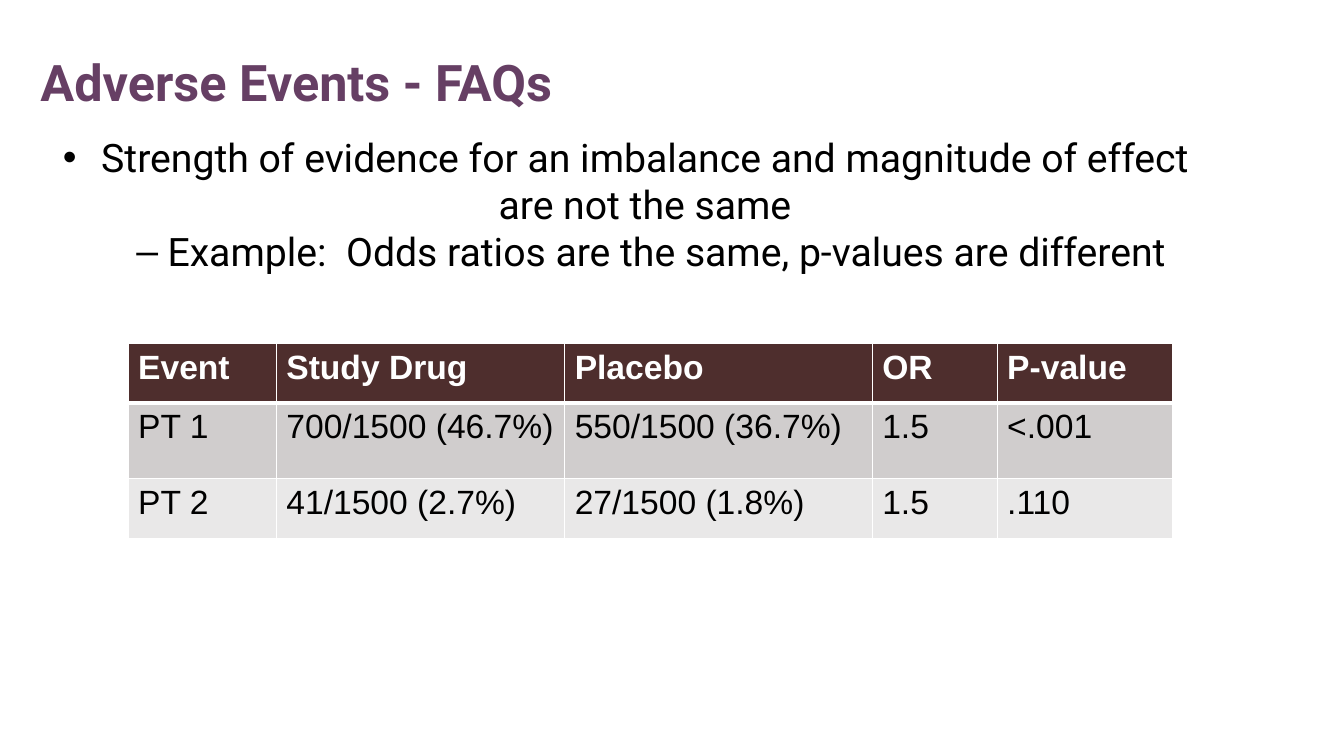
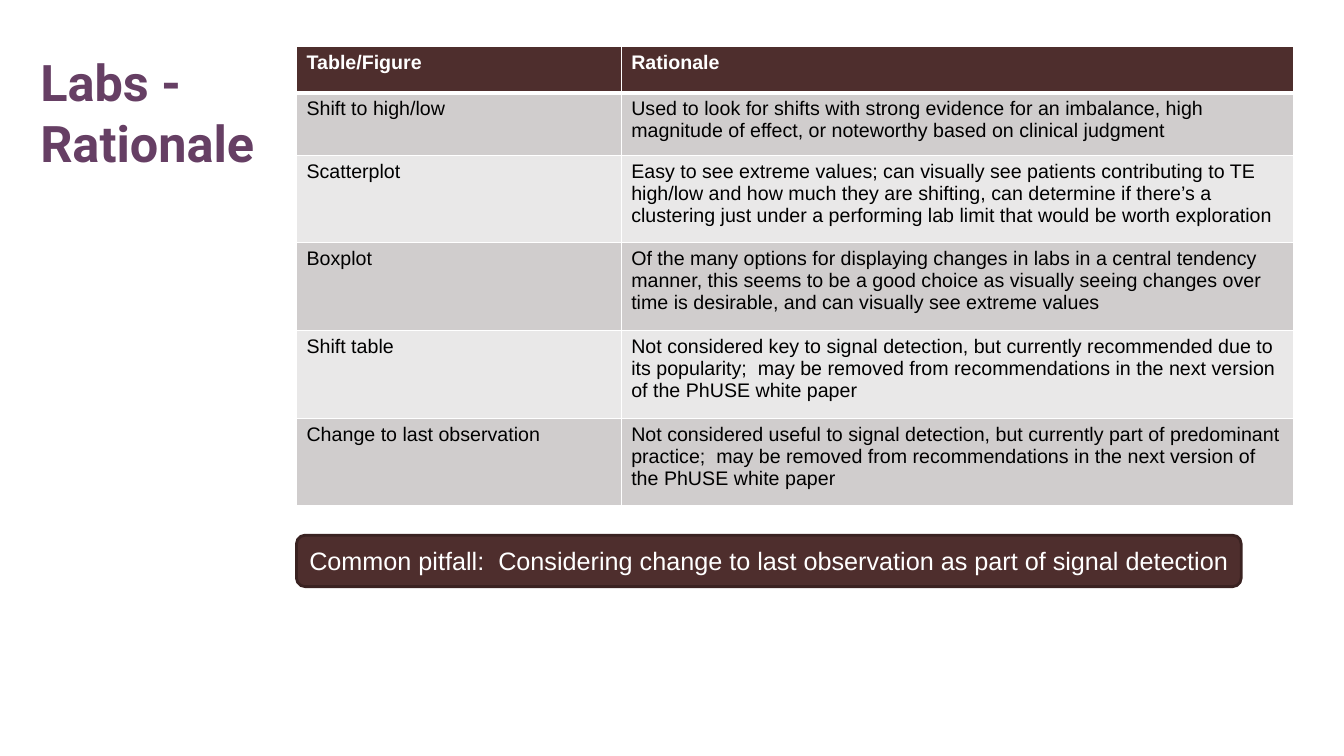
from lxml.etree import SubElement
from pptx import Presentation
from pptx.dml.color import RGBColor
from pptx.enum.shapes import MSO_SHAPE
from pptx.enum.text import MSO_ANCHOR, MSO_AUTO_SIZE, PP_ALIGN
from pptx.oxml.ns import qn
from pptx.util import Inches, Pt

PURPLE = RGBColor(0x66, 0x3F, 0x64)
BROWN = RGBColor(0x4E, 0x2E, 0x2D)
DARK_BROWN = RGBColor(0x3A, 0x22, 0x21)
GREY = RGBColor(0xD0, 0xCD, 0xCD)
PALE_GREY = RGBColor(0xE9, 0xE8, 0xE8)
BLACK = RGBColor(0x00, 0x00, 0x00)
WHITE = RGBColor(0xFF, 0xFF, 0xFF)

HEADING_FONT = "Roboto"
TABLE_FONT = "Arial"
WIDTH, HEIGHT = Inches(13.33), Inches(7.5)
TITLE_LEFT, TITLE_TOP = 2.25, 6.13
TITLE_ONLY, TITLE_AND_CONTENT = 5, 1

EVENTS = [
    ["Event", "Study Drug", "Placebo", "OR", "P-value"],
    ["PT 1", "700/1500 (46.7%)", "550/1500 (36.7%)", "1.5", "<.001"],
    ["PT 2", "41/1500 (2.7%)", "27/1500 (1.8%)", "1.5", ".110"],
]
RATIONALE = [
    ["Table/Figure", "Rationale"],
    ["Shift to high/low",
     "Used to look for shifts with strong evidence for an imbalance, high "
     "magnitude of effect, or noteworthy based on clinical judgment"],
    ["Scatterplot",
     "Easy to see extreme values; can visually see patients contributing to TE "
     "high/low and how much they are shifting, can determine if there’s a "
     "clustering just under a performing lab limit that would be worth exploration"],
    ["Boxplot",
     "Of the many options for displaying changes in labs in a central tendency "
     "manner, this seems to be a good choice as visually seeing changes over "
     "time is desirable, and can visually see extreme values"],
    ["Shift table",
     "Not considered key to signal detection, but currently recommended due to "
     "its popularity;  may be removed from recommendations in the next version "
     "of the PhUSE white paper"],
    ["Change to last observation",
     "Not considered useful to signal detection, but currently part of predominant "
     "practice;  may be removed from recommendations in the next version of "
     "the PhUSE white paper"],
]


def across(percent):
    return round(WIDTH * percent / 100)


def down(percent):
    return round(HEIGHT * percent / 100)


def area(left, top, width, height):
    return across(left), down(top), across(width), down(height)


def place(shape, *percents):
    shape.left, shape.top, shape.width, shape.height = area(*percents)


def write(paragraph, text, size, color, font=TABLE_FONT, bold=False,
          align=PP_ALIGN.LEFT, bullet=None, margin=0, hanging=0):
    if bullet:
        properties = paragraph._p.get_or_add_pPr()
        properties.set("marL", str(Inches(margin)))
        properties.set("indent", str(-Inches(hanging)))
        SubElement(properties, qn("a:buFont"), typeface="Arial")
        SubElement(properties, qn("a:buChar"), char=bullet)
    paragraph.alignment = align
    paragraph.space_before = Pt(0)
    run = paragraph.add_run()
    run.text = text
    run.font.name = font
    run.font.size = Pt(size)
    run.font.bold = bold
    run.font.color.rgb = color


def add_titled_slide(presentation, layout, title, width):
    slide = presentation.slides.add_slide(presentation.slide_layouts[layout])
    shape = slide.shapes.title
    place(shape, TITLE_LEFT, TITLE_TOP, width, 14.8)
    frame = shape.text_frame
    frame.auto_size = MSO_AUTO_SIZE.NONE
    frame.vertical_anchor = MSO_ANCHOR.TOP
    write(frame.paragraphs[0], title, 36, PURPLE, font=HEADING_FONT, bold=True)
    return slide


def fill_body(slide, points):
    body = slide.placeholders[1]
    place(body, 2.33, 16.93, 88.45, 28.4)
    frame = body.text_frame
    frame.auto_size = MSO_AUTO_SIZE.NONE
    for index, (text, level, bullet, margin, hanging) in enumerate(points):
        paragraph = frame.add_paragraph() if index else frame.paragraphs[0]
        paragraph.level = level
        write(paragraph, text, 28, BLACK, font=HEADING_FONT, align=PP_ALIGN.CENTER,
              bullet=bullet, margin=margin, hanging=hanging)


def border_cell(cell, top, bottom):
    properties = cell._tc.get_or_add_tcPr()
    for side, points in (("L", 1), ("R", 1), ("T", top), ("B", bottom)):
        line = SubElement(properties, qn(f"a:ln{side}"), w=str(Pt(points)))
        fill = SubElement(line, qn("a:solidFill"))
        SubElement(fill, qn("a:srgbClr"), val=str(WHITE))


def add_grid(slide, rows, left, top, widths, heights, size):
    bounds = area(left, top, sum(widths), sum(heights))
    table = slide.shapes.add_table(len(rows), len(widths), *bounds).table
    for column, width in zip(table.columns, widths):
        column.width = across(width)
    for index, (row, height, texts) in enumerate(zip(table.rows, heights, rows)):
        row.height = down(height)
        header = index == 0
        fill = BROWN if header else GREY if index % 2 else PALE_GREY
        for cell, text in zip(row.cells, texts):
            border_cell(cell, 3 if index == 1 else 1, 3 if header else 1)
            cell.fill.solid()
            cell.fill.fore_color.rgb = fill
            write(cell.text_frame.paragraphs[0], text, size,
                  WHITE if header else BLACK, bold=header)


def add_callout(slide, text, *percents):
    shape = slide.shapes.add_shape(MSO_SHAPE.ROUNDED_RECTANGLE, *area(*percents))
    shape.shadow.inherit = False
    shape.fill.solid()
    shape.fill.fore_color.rgb = BROWN
    shape.line.color.rgb = DARK_BROWN
    shape.line.width = Pt(2)
    shape.text_frame.word_wrap = False
    shape.text_frame.vertical_anchor = MSO_ANCHOR.MIDDLE
    write(shape.text_frame.paragraphs[0], text, 18, WHITE, align=PP_ALIGN.CENTER)


def add_events_slide(presentation):
    slide = add_titled_slide(presentation, TITLE_AND_CONTENT, "Adverse Events - FAQs", 95.87)
    fill_body(slide, [
        ("Strength of evidence for an imbalance and magnitude of effect are not the same",
         0, "•", 0.38, 0.38),
        ("Example:  Odds ratios are the same, p-values are different",
         1, "–", 0.81, 0.31),
    ])
    add_grid(slide, EVENTS, 9.53, 45.47, [11.03, 21.46, 22.88, 9.3, 13.05],
             [7.87, 10, 7.87], 24)


def add_labs_slide(presentation):
    table_left = 22.06
    slide = add_titled_slide(presentation, TITLE_ONLY, "Labs - Rationale", 19.8)
    add_grid(slide, RATIONALE, table_left, TITLE_TOP, [24.16, 50.04],
             [6.13, 8.27] + [11.6] * 4, 14)
    add_callout(slide,
                "Common pitfall:  Considering change to last observation as part of signal detection",
                table_left, 70.8, 70.29, 6.8)


def main():
    presentation = Presentation()
    presentation.slide_width, presentation.slide_height = WIDTH, HEIGHT
    add_events_slide(presentation)
    add_labs_slide(presentation)
    presentation.save("out.pptx")


if __name__ == "__main__":
    main()
